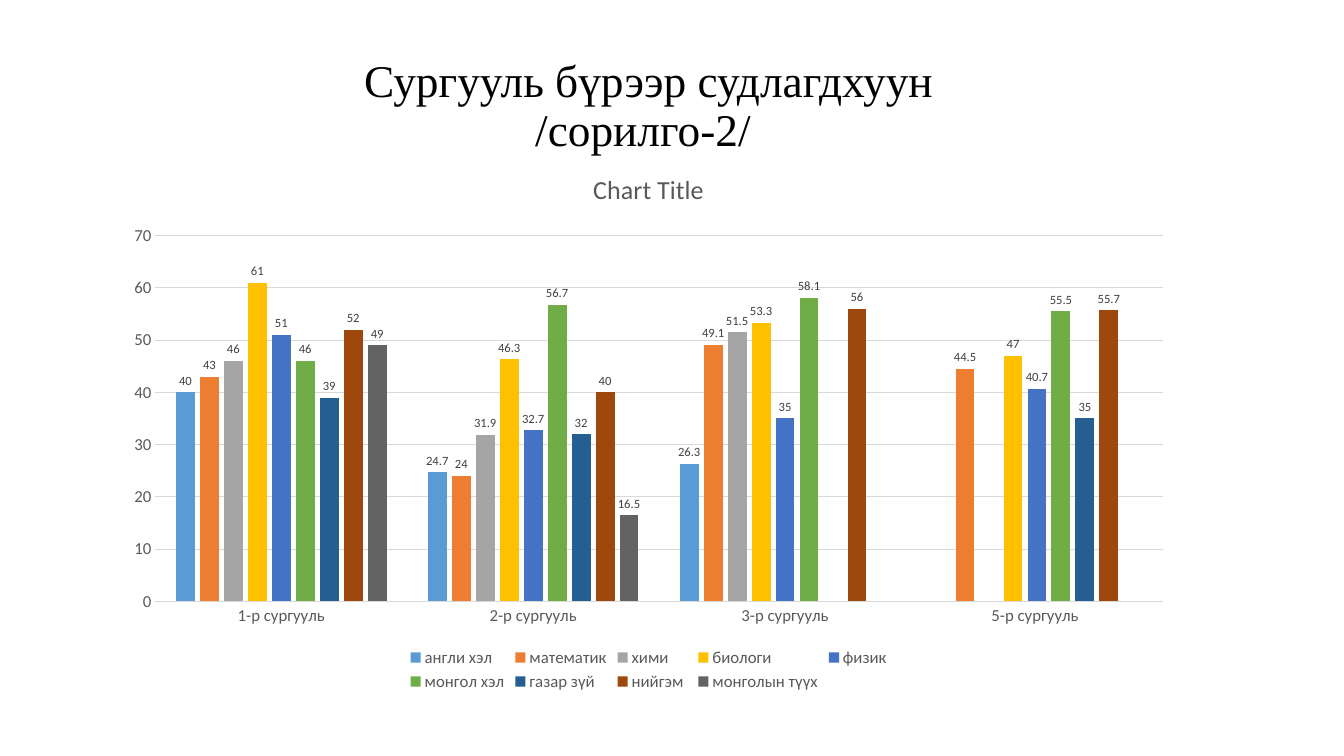
from dataclasses import dataclass

from pptx import Presentation
from pptx.chart.data import CategoryChartData
from pptx.dml.color import RGBColor
from pptx.enum.chart import XL_CHART_TYPE, XL_LABEL_POSITION, XL_LEGEND_POSITION, XL_TICK_MARK
from pptx.enum.text import MSO_ANCHOR, MSO_AUTO_SIZE, PP_ALIGN
from pptx.util import Pt

CLUSTERED = XL_CHART_TYPE.COLUMN_CLUSTERED
OUTSIDE_END = XL_LABEL_POSITION.OUTSIDE_END
LEGEND_BOTTOM = XL_LEGEND_POSITION.BOTTOM
NO_TICK = XL_TICK_MARK.NONE
MIDDLE = MSO_ANCHOR.MIDDLE
NO_AUTOFIT = MSO_AUTO_SIZE.NONE
CENTER = PP_ALIGN.CENTER

BLACK = RGBColor(0x00, 0x00, 0x00)
LABEL_GRAY = RGBColor(0x40, 0x40, 0x40)
TEXT_GRAY = RGBColor(0x59, 0x59, 0x59)
GRID_GRAY = RGBColor(0xD9, 0xD9, 0xD9)

LEFT, WIDTH = Pt(80.64), Pt(765.36)
TITLE_TOP, TITLE_HEIGHT = Pt(46.08), Pt(61.2)
CHART_TOP, CHART_HEIGHT = TITLE_TOP + TITLE_HEIGHT, Pt(389.52)
VALUE_LABEL_SIZE = 9  # narrow enough for one label per column


@dataclass
class Subject:
    name: str
    scores: tuple
    color: RGBColor


SCHOOLS = ("1-р сургууль", "2-р сургууль", "3-р сургууль", "5-р сургууль ")
SUBJECTS = (
    Subject("англи хэл", (40, 24.7, 26.3, None), RGBColor(0x5B, 0x9B, 0xD5)),
    Subject("математик", (43, 24, 49.1, 44.5), RGBColor(0xED, 0x7D, 0x31)),
    Subject("хими", (46, 31.9, 51.5, None), RGBColor(0xA5, 0xA5, 0xA5)),
    Subject("биологи ", (61, 46.3, 53.3, 47), RGBColor(0xFF, 0xC0, 0x00)),
    Subject("физик", (51, 32.7, 35, 40.7), RGBColor(0x44, 0x72, 0xC4)),
    Subject("монгол хэл", (46, 56.7, 58.1, 55.5), RGBColor(0x70, 0xAD, 0x47)),
    Subject("газар зүй ", (39, 32, None, 35), RGBColor(0x25, 0x5E, 0x91)),
    Subject("нийгэм ", (52, 40, 56, 55.7), RGBColor(0x9E, 0x48, 0x0E)),
    Subject("монголын түүх", (49, 16.5, None, None), RGBColor(0x63, 0x63, 0x63)),
)


def set_font(font, size: float, color: RGBColor, name: str = "Calibri") -> None:
    font.name = name
    font.size = Pt(size)
    font.bold = False
    font.color.rgb = color


def set_line(line) -> None:
    line.color.rgb = GRID_GRAY
    line.width = Pt(0.75)


def add_title(slide) -> None:
    title = slide.shapes.title
    title.left, title.top = LEFT, TITLE_TOP
    title.width, title.height = WIDTH, TITLE_HEIGHT
    text_frame = title.text_frame
    text_frame.text = "Сургууль бүрээр судлагдхуун\v/сорилго-2/ "
    text_frame.word_wrap = True
    text_frame.auto_size = NO_AUTOFIT
    text_frame.vertical_anchor = MIDDLE
    paragraph = text_frame.paragraphs[0]
    paragraph.alignment = CENTER
    paragraph.line_spacing = 0.9
    for run in paragraph.runs:
        set_font(run.font, 32.4, BLACK, "Times New Roman")


def add_scores_chart(slide) -> None:
    data = CategoryChartData()
    data.categories = SCHOOLS
    for subject in SUBJECTS:
        data.add_series(subject.name, subject.scores)
    chart = slide.shapes.add_chart(
        CLUSTERED, LEFT, CHART_TOP, WIDTH, CHART_HEIGHT, data
    ).chart
    set_font(chart.font, 10, BLACK)

    # Chart title and legend
    chart.has_title = True
    title_frame = chart.chart_title.text_frame
    title_frame.text = "Chart Title"
    set_font(title_frame.paragraphs[0].runs[0].font, 18.6, TEXT_GRAY)
    chart.chart_title.include_in_layout = False
    chart.has_legend = True
    chart.legend.position = LEGEND_BOTTOM
    chart.legend.include_in_layout = False
    set_font(chart.legend.font, 12, TEXT_GRAY)

    # Axes
    for axis in (chart.category_axis, chart.value_axis):
        axis.major_tick_mark = axis.minor_tick_mark = NO_TICK
        set_font(axis.tick_labels.font, 12, TEXT_GRAY)
    set_line(chart.category_axis.format.line)
    value_axis = chart.value_axis
    value_axis.minimum_scale, value_axis.maximum_scale = 0, 70
    value_axis.major_unit = 10
    value_axis.format.line.fill.background()
    set_line(value_axis.major_gridlines.format.line)

    # Columns and their labels
    plot = chart.plots[0]
    plot.gap_width = 219
    plot.overlap = -27
    plot.vary_by_categories = False
    for series, subject in zip(plot.series, SUBJECTS):
        series.format.fill.solid()
        series.format.fill.fore_color.rgb = subject.color
        series.invert_if_negative = False
        labels = series.data_labels
        labels.show_value = True
        labels.position = OUTSIDE_END
        set_font(labels.font, VALUE_LABEL_SIZE, LABEL_GRAY)


def main() -> None:
    presentation = Presentation()
    presentation.slide_width, presentation.slide_height = Pt(960), Pt(540)
    title_only = presentation.slide_layouts[5]
    slide = presentation.slides.add_slide(title_only)
    add_title(slide)
    add_scores_chart(slide)
    presentation.save("out.pptx")


if __name__ == "__main__":
    main()
